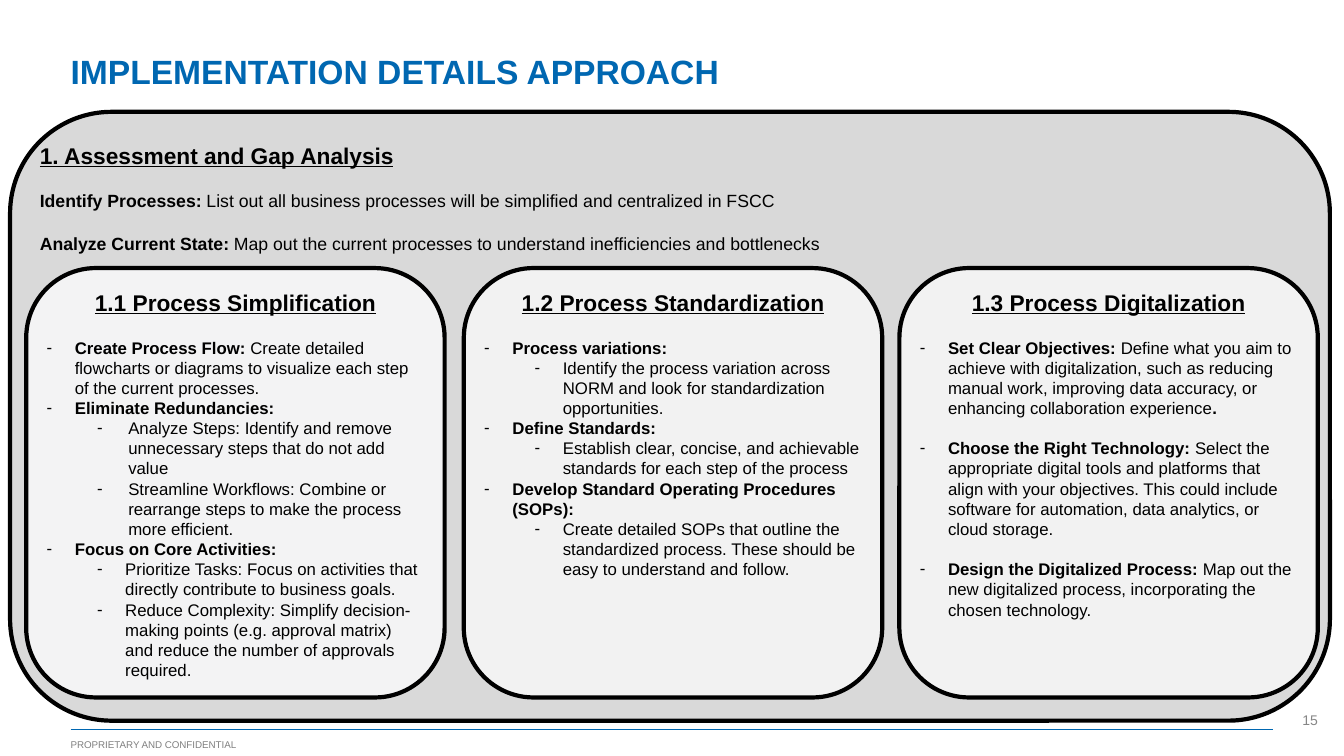
from lxml import etree
from pptx import Presentation
from pptx.dml.color import RGBColor
from pptx.enum.shapes import MSO_CONNECTOR, MSO_SHAPE
from pptx.enum.text import MSO_ANCHOR, PP_ALIGN
from pptx.oxml.ns import qn
from pptx.util import Inches, Pt

ROUNDED = MSO_SHAPE.ROUNDED_RECTANGLE
STRAIGHT = MSO_CONNECTOR.STRAIGHT
TOP, MIDDLE, BOTTOM = MSO_ANCHOR.TOP, MSO_ANCHOR.MIDDLE, MSO_ANCHOR.BOTTOM
LEFT, CENTER, RIGHT = PP_ALIGN.LEFT, PP_ALIGN.CENTER, PP_ALIGN.RIGHT

COLORS = {
    "accent": "0067B1",
    "footer": "808080",
    "number": "868686",
    "ink": "000000",
    "panel": "D9D9D9",
    "first card": "F3F3F4",
    "card": "F2F2F2",
}
BULLETS = {
    "step": (0, 0.28, 0.28),
    "task": (1, 0.78, 0.28),
    "wide task": (1, 0.81, 0.31),
}
HEADING_SIZE, INTRO_SIZE, BODY_SIZE = 16.2, 12.6, 12
HEADING_GAP, ITEM_GAP = 15.4, 14.4
CARD_TOP, CARD_WIDTH, CARD_HEIGHT = 2.66, 4.15, 4.26

INTRO = [
    "**Identify Processes:** List out all business processes will be simplified and centralized in FSCC",
    "**Analyze Current State:** Map out the current processes to understand inefficiencies and bottlenecks",
]
CARDS = [
    (0.26, "first card", "1.1 Process Simplification", 0, [
        ("step", "**Create Process Flow:** Create detailed flowcharts or diagrams to visualize "
                 "each step of the current processes."),
        ("step", "**Eliminate Redundancies:**"),
        ("wide task", "Analyze Steps: Identify and remove unnecessary steps that do not add value"),
        ("wide task", "Streamline Workflows: Combine or rearrange steps to make the process more efficient."),
        ("step", "**Focus on Core Activities:**"),
        ("task", "Prioritize Tasks: Focus on activities that directly contribute to business goals."),
        ("task", "Reduce Complexity: Simplify decision-making points (e.g. approval matrix) "
                 "and reduce the number of approvals required."),
    ]),
    (4.6, "card", "1.2 Process Standardization", 0, [
        ("step", "**Process variations:**"),
        ("task", "Identify the process variation across NORM and look for standardization opportunities."),
        ("step", "**Define Standards:**"),
        ("task", "Establish clear, concise, and achievable standards for each step of the process"),
        ("step", "**Develop Standard Operating Procedures (SOPs):**"),
        ("task", "Create detailed SOPs that outline the standardized process. "
                 "These should be easy to understand and follow."),
    ]),
    (8.92, "card", "1.3 Process Digitalization", ITEM_GAP, [
        ("step", "**Set Clear Objectives: **Define what you aim to achieve with digitalization, such as "
                 "reducing manual work, improving data accuracy, or enhancing collaboration experience**.**"),
        ("step", "**Choose the Right Technology:** Select the appropriate digital tools and platforms that "
                 "align with your objectives. This could include software for automation, "
                 "data analytics, or cloud storage."),
        ("step", "**Design the Digitalized Process:** Map out the new digitalized process, "
                 "incorporating the chosen technology."),
    ]),
]


class SlideBuilder:
    """Holds the text style and the current page, and draws each kind of element."""

    def __init__(self, page, font="Arial"):
        self.page = page
        self.font = font

    def style(self, span, size, color="ink", bold=False, underline=False):
        span.font.name = self.font
        span.font.size = Pt(size)
        span.font.bold = bold
        span.font.underline = underline
        span.font.color.rgb = RGBColor.from_string(COLORS[color])

    def frame(self, box, anchor):
        frame = box.text_frame
        frame.word_wrap = True
        frame.vertical_anchor = anchor
        frame.margin_left = frame.margin_right = 0
        frame.margin_top = frame.margin_bottom = 0
        return frame

    def rule(self, left, right, y):
        line = self.page.shapes.add_connector(
            STRAIGHT, Inches(left), Inches(y), Inches(right), Inches(y))
        line.line.color.rgb = RGBColor.from_string(COLORS["accent"])
        line.line.width = Pt(1)
        etree.SubElement(line.element.spPr, qn("a:effectLst"))

    def label(self, area, text, size, color, anchor=BOTTOM, align=LEFT, bold=False, spacing=None):
        box = self.page.shapes.add_textbox(*map(Inches, area))
        frame = self.frame(box, anchor)
        frame.text = text
        para = frame.paragraphs[0]
        para.alignment = align
        para.line_spacing = spacing
        self.style(para.runs[0], size, color, bold)

    def panel(self, area, fill, heading, align=LEFT):
        box = self.page.shapes.add_shape(ROUNDED, *map(Inches, area))
        box.shadow.inherit = False
        box.fill.solid()
        box.fill.fore_color.rgb = RGBColor.from_string(COLORS[fill])
        box.line.color.rgb = RGBColor.from_string(COLORS["ink"])
        box.line.width = Pt(3)
        frame = self.frame(box, TOP)
        frame.text = heading
        para = frame.paragraphs[0]
        para.alignment = align
        self.style(para.runs[0], HEADING_SIZE, bold=True, underline=True)
        return frame

    def paragraph(self, frame, text, size, gap, bullet=None):
        para = frame.add_paragraph()
        para.alignment = LEFT
        if bullet:
            self.bullet(para, bullet)
        para.space_before = Pt(gap)
        for position, part in enumerate(text.split("**")):
            if part:
                span = para.add_run()
                span.text = part
                self.style(span, size, bold=position % 2 == 1)

    def bullet(self, para, kind):
        para.level, margin, hanging = BULLETS[kind]
        properties = para._p.get_or_add_pPr()
        properties.set("marL", str(Inches(margin)))
        properties.set("indent", str(-Inches(hanging)))
        etree.SubElement(properties, qn("a:buFont"), typeface=self.font)
        etree.SubElement(properties, qn("a:buChar"), char="-")


def main():
    deck = Presentation()
    deck.slide_width, deck.slide_height = Inches(13.33), Inches(7.5)
    builder = SlideBuilder(deck.slides.add_slide(deck.slide_layouts[6]))

    builder.rule(0.7, 12.63, 7.24)
    builder.label((0.7, 7.32, 1.82, 0.12), "PROPRIETARY AND CONFIDENTIAL", 7, "footer")
    builder.label((12.8, 7.08, 0.27, 0.15), "15", 10, "number", align=RIGHT)
    builder.label((0.7, 0.35, 10.02, 0.76), "IMPLEMENTATION DETAILS APPROACH", 24, "accent",
                  anchor=MIDDLE, bold=True, spacing=0.9)

    frame = builder.panel((0.1, 1.11, 13.09, 6.04), "panel", "1. Assessment and Gap Analysis")
    for text in INTRO:
        builder.paragraph(frame, text, INTRO_SIZE, HEADING_GAP)

    for left, fill, heading, item_gap, items in CARDS:
        frame = builder.panel((left, CARD_TOP, CARD_WIDTH, CARD_HEIGHT), fill, heading, CENTER)
        for position, (kind, text) in enumerate(items):
            gap = item_gap if position else HEADING_GAP
            builder.paragraph(frame, text, BODY_SIZE, gap, kind)

    deck.save("out.pptx")


if __name__ == "__main__":
    main()
